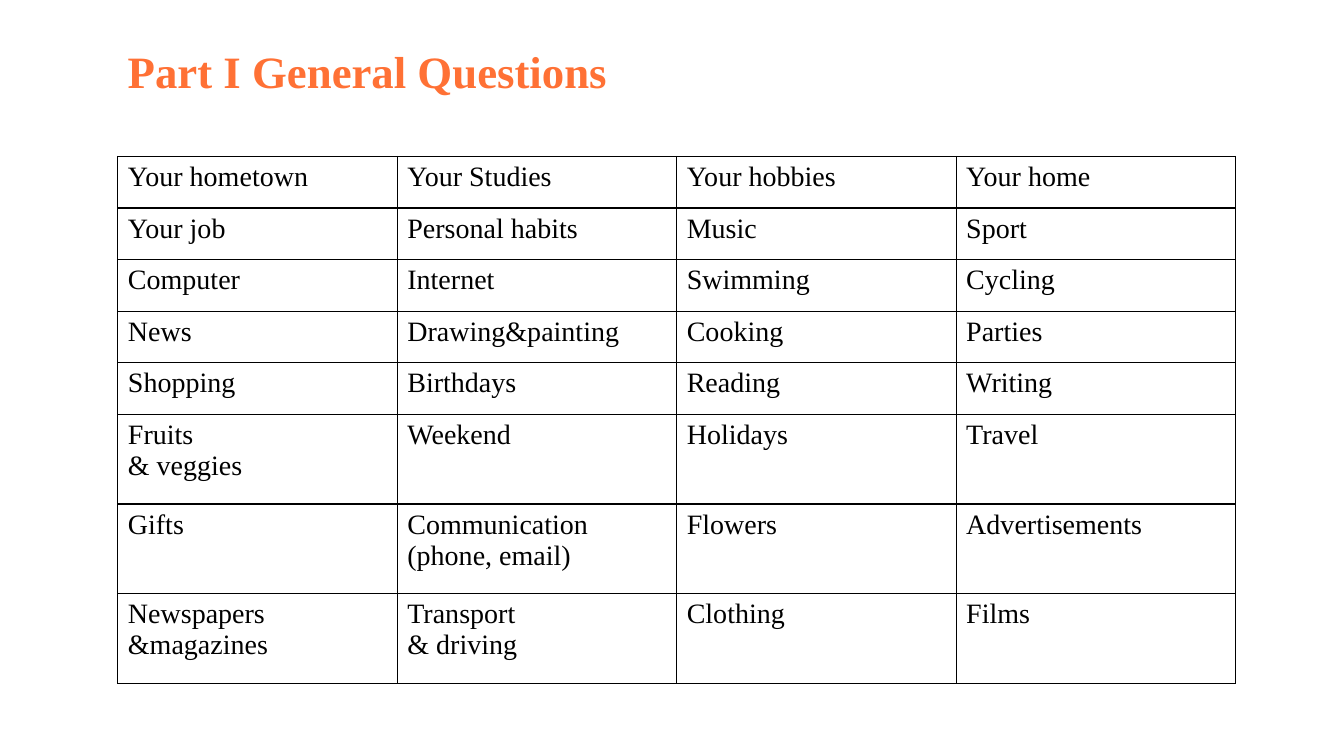
from lxml import etree
from pptx import Presentation
from pptx.dml.color import RGBColor
from pptx.enum.text import MSO_AUTO_SIZE
from pptx.oxml.ns import qn
from pptx.util import Cm, Pt

RESIZE_BOX = MSO_AUTO_SIZE.SHAPE_TO_FIT_TEXT
ORANGE = RGBColor(0xFF, 0x71, 0x35)
BLACK = RGBColor(0x00, 0x00, 0x00)
FONT = "Times New Roman"

SHORT_ROW, TALL_ROW = 1.3, 2.26
# Each topic is a tuple of lines when it takes more than one
TOPICS = [
    ["Your hometown", "Your Studies", "Your hobbies", "Your home"],
    ["Your job", "Personal habits", "Music", "Sport"],
    ["Computer", "Internet", "Swimming", "Cycling"],
    ["News", "Drawing&painting", "Cooking", "Parties"],
    ["Shopping", "Birthdays", "Reading", "Writing"],
    [("Fruits", "& veggies"), "Weekend", "Holidays", "Travel"],
    ["Gifts", ("Communication", "(phone, email)"), "Flowers", "Advertisements"],
    [("Newspapers", "&magazines"), ("Transport", "& driving"), "Clothing", "Films"],
]


def add_run(paragraph, text, size, color, bold=False):
    run = paragraph.add_run()
    run.text = text
    font = run.font
    font.name, font.size, font.bold = FONT, Pt(size), bold
    font.color.rgb = color


def add_borders(cell):
    properties = cell._tc.get_or_add_tcPr()
    for side in ("a:lnL", "a:lnR", "a:lnT", "a:lnB"):
        line = etree.SubElement(properties, qn(side), w=str(Pt(1)))
        fill = etree.SubElement(line, qn("a:solidFill"))
        etree.SubElement(fill, qn("a:srgbClr"), val=str(BLACK))


def add_heading(slide, left, top, width, height):
    heading = slide.shapes.add_textbox(Cm(left), Cm(top), Cm(width), Cm(height))
    frame = heading.text_frame
    frame.word_wrap = True
    frame.auto_size = RESIZE_BOX
    add_run(frame.paragraphs[0], "Part I General Questions", 32, ORANGE, bold=True)


def add_topic_table(slide, left, top, width, height):
    columns = len(TOPICS[0])
    topic_table = slide.shapes.add_table(
        len(TOPICS), columns, Cm(left), Cm(top), Cm(width), Cm(height)
    ).table
    topic_table.first_row = False
    topic_table.horz_banding = False
    for column in topic_table.columns:
        column.width = Cm(width / columns)

    for row_index, topics in enumerate(TOPICS):
        has_two_lines = any(isinstance(topic, tuple) for topic in topics)
        topic_table.rows[row_index].height = Cm(TALL_ROW if has_two_lines else SHORT_ROW)
        for column_index, topic in enumerate(topics):
            cell = topic_table.cell(row_index, column_index)
            add_borders(cell)
            cell.fill.background()
            frame = cell.text_frame
            lines = topic if isinstance(topic, tuple) else (topic,)
            for number, line in enumerate(lines):
                paragraph = frame.add_paragraph() if number else frame.paragraphs[0]
                add_run(paragraph, line, 20, BLACK)


def main():
    deck = Presentation()
    deck.slide_width, deck.slide_height = Cm(33.87), Cm(19.05)
    slide = deck.slides.add_slide(deck.slide_layouts[6])
    # Heading above, table of topics below, on the same left edge
    left = 2.97
    add_heading(slide, left, 0.97, 14.8, 1.6)
    add_topic_table(slide, left, 3.94, 28.17, 13.28)
    deck.save("out.pptx")


if __name__ == "__main__":
    main()
